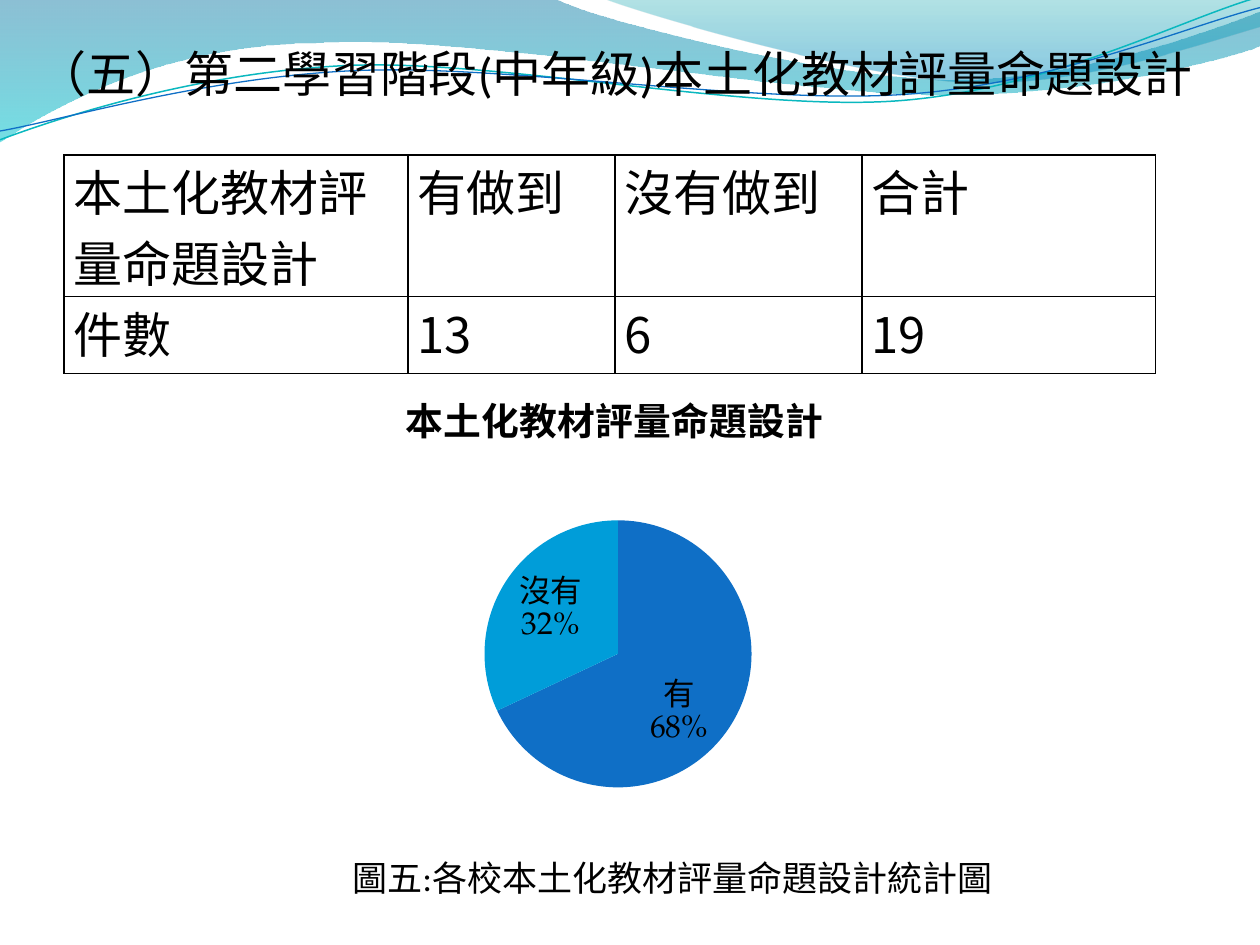
import math

from lxml import etree
from pptx import Presentation
from pptx import util as u
from pptx.chart import data as cd
from pptx.dml.color import RGBColor
from pptx.enum import chart as ch
from pptx.enum import text
from pptx.oxml import parse_xml
from pptx.oxml.ns import nsdecls, qn

COLORS = {"ink": "000000", "aqua": "0AB8BF", "blue": "0F6FC6", "sky": "009DD9"}
LATIN, CJK, SERIF = "Calibri", "Noto Sans CJK TC", "TeX Gyre Pagella"
TOPIC = "本土化教材評量命題設計"
CHART_BOX = (0.59, 2.88, 8.58, 3.86)
PIE_BOX = (3.25, 1.25, 2.13, 2.12)
LABEL_SHIFTS = [(-0.13, 0.2), (0.06, -0.16)]

WAVES = [
    ((-0.01, -0.01, 10.02, 1.14),
     [(0, -0.01), (4.4, -0.01), (4.76, 0.17, 6.64, 0.63, 7.58, 0.63),
      (8.53, 0.63, 9.58, 0.26, 10, 0.09), (10.01, 0.36),
      (9.83, 0.44, 8.7, 0.76, 7.46, 0.75), (6.22, 0.75, 3.82, 0.28, 2.57, 0.34),
      (1.29, 0.35, 0.46, 0.83, -0.01, 1.13), (0, -0.01)],
     [(0, "0074A1", 45), (100, "00C6CF", 55)]),
    ((4.79, -0.01, 5.21, 0.7),
     [(4.79, -0.01), (5.09, 0.11, 6.82, 0.62, 7.69, 0.65),
      (8.56, 0.69, 9.61, 0.32, 10, 0.21), (10, 0), (4.79, -0.01)],
     [(0, "00A1A9", 30), (80, "008BBF", 45)]),
]
STRANDS = [
    ((-0.02, 0.22, 10.02, 0.71),
     [(0, 1.11), (0.48, 0.93, 1.58, 0.57, 2.77, 0.52),
      (3.95, 0.47, 5.93, 0.89, 7.13, 0.8), (8.33, 0.71, 9.38, 0.15, 9.98, -0.02)],
     "aqua", 0.85),
    ((-0.02, 0.3, 10.03, 0.58),
     [(0, 1.04), (0.47, 0.96, 1.64, 0.61, 2.83, 0.56),
      (4.03, 0.51, 5.97, 0.83, 7.17, 0.75), (8.36, 0.67, 9.41, 0.21, 10, 0.06)],
     "blue", 0.75),
]
TILT = -2.7


def rgb(name):
    """Return the named colour."""
    return RGBColor.from_string(COLORS[name])


def set_all(target, values):
    """Set each attribute in a dict of format values."""
    for name, value in values.items():
        setattr(target, name, value)


def style_font(font, size, latin, bold=False):
    """Apply size, face and ink colour to a font."""
    set_all(font, {"size": u.Pt(size), "name": latin, "bold": bold})
    font.color.rgb = rgb("ink")


def add_run(paragraph, words, size, latin, east_asian):
    """Add a run with separate Latin and East Asian faces."""
    run = paragraph.add_run()
    run.text = words
    style_font(run.font, size, latin)
    etree.SubElement(run.font._element, qn("a:ea"), typeface=east_asian)


def local_point(box, x, y, tilt):
    """Undo the tilt about the box centre and measure from its corner."""
    left, top, width, height = box
    dx, dy = x - left - width / 2, y - top - height / 2
    cos, sin = math.cos(math.radians(-tilt)), math.sin(math.radians(-tilt))
    return (u.Inches(dx * cos - dy * sin + width / 2),
            u.Inches(dx * sin + dy * cos + height / 2))


def add_outline(slide, box, steps, closed, tilt=0):
    """Draw a freeform of lines and cubic curves in its box."""
    nodes = [[local_point(box, *step[i:i + 2], tilt) for i in range(0, len(step), 2)]
             for step in steps]
    builder = slide.shapes.build_freeform(*nodes[0][0], scale=1.0)
    builder.add_line_segments([node[-1] for node in nodes[1:]], close=closed)
    outline = builder.convert_to_shape()
    outline.shadow.inherit = False
    set_all(outline, dict(zip(("left", "top", "width", "height"), map(u.Inches, box))))
    outline.rotation = tilt
    trail = outline._element.spPr.find(f'.//{qn("a:path")}')
    for old in list(trail):
        trail.remove(old)
    trail.set("w", str(outline.width))
    trail.set("h", str(outline.height))
    for i, node in enumerate(nodes):
        kind = "moveTo" if i == 0 else "lnTo" if len(node) == 1 else "cubicBezTo"
        step = etree.SubElement(trail, qn(f"a:{kind}"))
        for x, y in node:
            etree.SubElement(step, qn("a:pt"), x=str(x), y=str(y))
    if closed:
        etree.SubElement(trail, qn("a:close"))
    return outline


def add_wave(slide, box, steps, stops):
    """Add a wave filled with a translucent vertical gradient."""
    wave = add_outline(slide, box, steps, True)
    wave.line.fill.background()
    marks = "".join(
        f'<a:gs pos="{pos * 1000}"><a:srgbClr val="{color}">'
        f'<a:alpha val="{alpha * 1000}"/></a:srgbClr></a:gs>'
        for pos, color, alpha in stops)
    wave._element.spPr.find(qn("a:custGeom")).addnext(parse_xml(
        f'<a:gradFill {nsdecls("a")} rotWithShape="1"><a:gsLst>{marks}</a:gsLst>'
        '<a:lin ang="5400000" scaled="0"/></a:gradFill>'))


def add_strand(slide, box, steps, color, width):
    """Add a thin tilted open curve."""
    strand = add_outline(slide, box, steps, False, TILT)
    strand.fill.background()
    strand.line.color.rgb = rgb(color)
    strand.line.width = u.Pt(width)


def add_text(slide, box, words, size, bottom=0.05, indent=0):
    """Add a wrapped, middle-anchored text box."""
    frame = slide.shapes.add_textbox(*map(u.Inches, box)).text_frame
    set_all(frame, {"word_wrap": True, "auto_size": text.MSO_AUTO_SIZE.NONE,
                    "vertical_anchor": text.MSO_ANCHOR.MIDDLE,
                    "margin_bottom": u.Inches(bottom)})
    paragraph = frame.paragraphs[0]
    paragraph._p.get_or_add_pPr().set("indent", str(u.Inches(indent)))
    add_run(paragraph, words, size, LATIN, LATIN)


def border_cell(cell):
    """Draw a black line on each side of a cell."""
    properties = cell._tc.get_or_add_tcPr()
    for i, side in enumerate(("lnL", "lnR", "lnT", "lnB")):
        properties.insert(i, parse_xml(
            f'<a:{side} {nsdecls("a")} w="12700"><a:solidFill>'
            f'<a:srgbClr val="{COLORS["ink"]}"/></a:solidFill></a:{side}>'))


def add_counts(slide):
    """Add the table of counts."""
    rows = [(TOPIC, "有做到", "沒有做到", "合計"), ("件數", "13", "6", "19")]
    widths, heights = (2.73, 1.64, 1.96, 2.33), (0.94, 0.61)
    table = slide.shapes.add_table(
        len(rows), len(widths),
        *map(u.Inches, (0.51, 1.23, sum(widths), sum(heights)))).table
    set_all(table, {"first_row": False, "horz_banding": False})
    for column, width in zip(table.columns, widths):
        column.width = u.Inches(width)
    for r, (row, latin) in enumerate(zip(rows, (LATIN, CJK))):
        table.rows[r].height = u.Inches(heights[r])
        for c, words in enumerate(row):
            cell = table.cell(r, c)
            set_all(cell, {"margin_left": u.Pt(5.4), "margin_right": u.Pt(5.4),
                           "margin_top": 0, "margin_bottom": 0})
            cell.fill.background()
            border_cell(cell)
            add_run(cell.text_frame.paragraphs[0], words, 28, latin, CJK)


def layout_xml(values):
    """Return a manual chart layout holding the given values."""
    spots = "".join(f'<c:{k} val="{v}"/>' for k, v in values.items())
    return (f'<c:layout {nsdecls("c")}><c:manualLayout>{spots}'
            '</c:manualLayout></c:layout>')


def add_pie(slide):
    """Add the pie chart of shares."""
    shares = cd.CategoryChartData()
    shares.categories = ["有", "沒有"]
    shares.add_series(TOPIC, (68, 32))
    pie = slide.shapes.add_chart(
        ch.XL_CHART_TYPE.PIE, *map(u.Inches, CHART_BOX), shares).chart
    style_font(pie.font, 18, SERIF)
    set_all(pie, {"has_legend": False, "has_title": True})
    heading = pie.chart_title.text_frame
    heading.text = TOPIC
    style_font(heading.paragraphs[0].runs[0].font, 21.6, SERIF, True)
    pie.plots[0].vary_by_categories = True
    series = pie.plots[0].series[0]
    labels = series.data_labels
    set_all(labels, {"show_percentage": True, "show_category_name": True,
                     "show_value": False, "position": ch.XL_LABEL_POSITION.INSIDE_END})
    style_font(labels.font, 18, SERIF)
    labels._element.find(qn("c:showPercent")).getnext().addnext(
        parse_xml(f'<c:separator {nsdecls("c")}>\n</c:separator>'))
    shown = "".join(f'<c:show{k} val="{v}"/>' for k, v in (
        ("LegendKey", 0), ("Val", 0), ("CatName", 1), ("SerName", 0),
        ("Percent", 1), ("BubbleSize", 0)))
    width, height = CHART_BOX[2:]
    for i, (color, (dx, dy)) in enumerate(zip(("blue", "sky"), LABEL_SHIFTS)):
        fill = series.points[i].format.fill
        fill.solid()
        fill.fore_color.rgb = rgb(color)
        shift = layout_xml({"x": dx / width, "y": dy / height})
        labels._element.insert(i, parse_xml(
            f'<c:dLbl {nsdecls("c")}><c:idx val="{i}"/>{shift}'
            f'<c:dLblPos val="inEnd"/>{shown}<c:separator>\n</c:separator></c:dLbl>'))
    area = pie._chartSpace.chart.plotArea
    for old in area.findall(qn("c:layout")):
        area.remove(old)
    left, top, wide, high = PIE_BOX
    area.insert(0, parse_xml(layout_xml({
        "layoutTarget": "inner", "xMode": "edge", "yMode": "edge",
        "x": left / width, "y": top / height, "w": wide / width, "h": high / height})))


def main():
    """Build the slide and save it."""
    deck = Presentation()
    set_all(deck, {"slide_width": u.Inches(10), "slide_height": u.Inches(7.5)})
    slide = deck.slides.add_slide(deck.slide_layouts[6])
    for wave in WAVES:
        add_wave(slide, *wave)
    for strand in STRANDS:
        add_strand(slide, *strand)
    add_counts(slide)
    add_text(slide, (0.2, 0.28, 9.47, 0.88),
             f"（五）第二學習階段(中年級){TOPIC}", 28, bottom=0.33)
    add_text(slide, (2.56, 6.74, 5.47, 0.44),
             f"圖五:各校{TOPIC}統計圖", 20, bottom=0.04, indent=0.14)
    add_pie(slide)
    deck.save("out.pptx")


if __name__ == "__main__":
    main()
